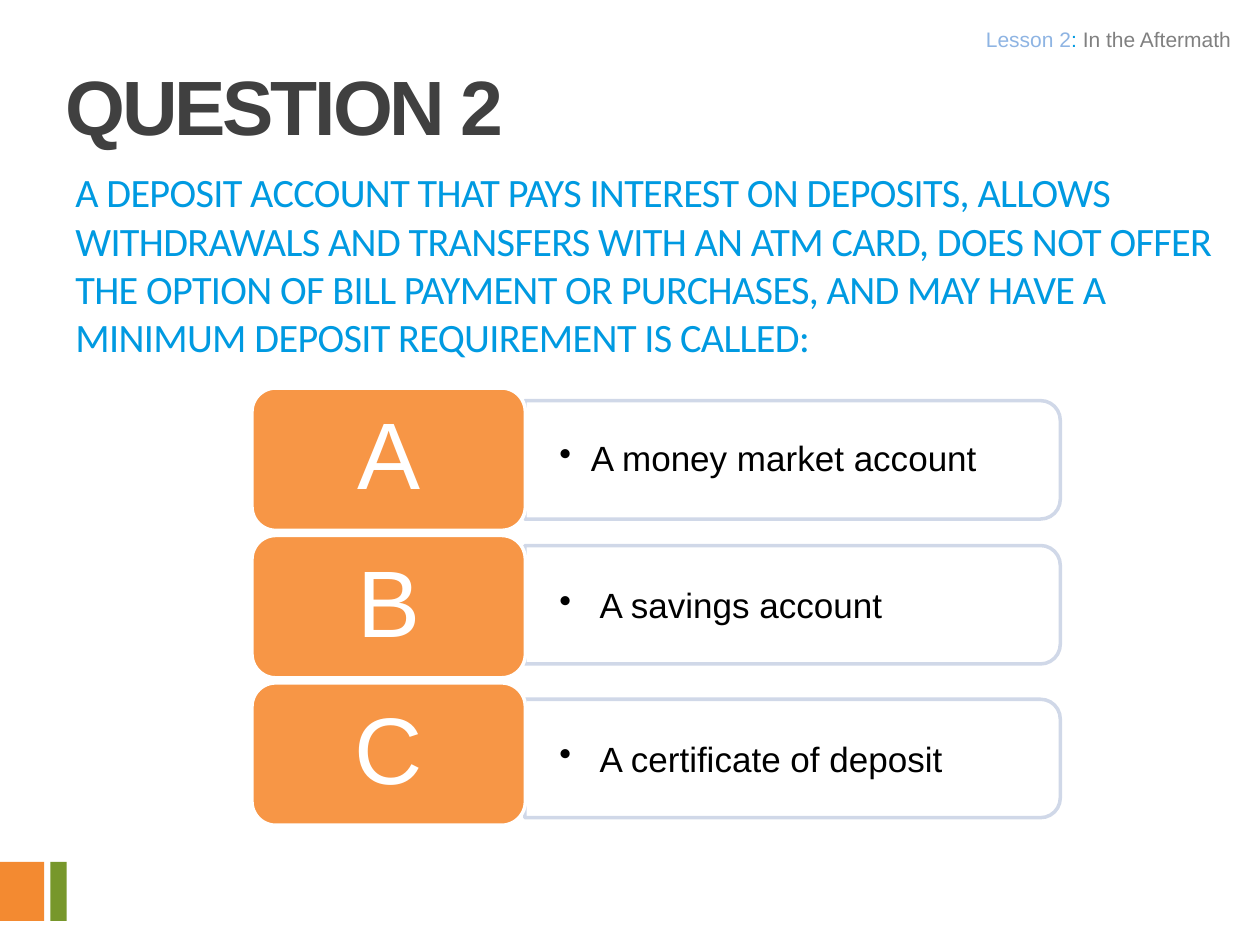
from lxml import etree
from pptx import Presentation, util as u
from pptx.dml.color import RGBColor
from pptx.enum import shapes, text
from pptx.oxml.ns import qn

WIDE, HIGH = 10, 7.5
STEP = 1.17  # distance between answer rows
KIND = shapes.MSO_SHAPE
ROWS = [  # letter, answer, middle of the answer frame, hanging indent
    ("A", "A money market account", 3.65, 0.25),
    ("B", "A savings account", 4.8, 0.32),
    ("C", "A certificate of deposit", 6.02, 0.32),
]
ASK = ("A DEPOSIT ACCOUNT THAT PAYS INTEREST ON DEPOSITS, ALLOWS "
       "WITHDRAWALS AND TRANSFERS WITH AN ATM CARD, DOES NOT OFFER THE "
       "OPTION OF BILL PAYMENT OR PURCHASES, AND MAY HAVE A MINIMUM "
       "DEPOSIT REQUIREMENT IS CALLED:")


def tint(color, code):
    color.rgb = RGBColor.from_string(code)


def block(slide, kind, area, fill, line=None):
    """Draw a filled preset shape, with a 2 pt outline if asked."""
    shape = slide.shapes.add_shape(kind, *map(u.Inches, area))
    shape.shadow.inherit = False
    shape.fill.solid()
    tint(shape.fill.fore_color, fill)
    if line:
        tint(shape.line.color, line)
        shape.line.width = u.Pt(2)
    else:
        shape.line.fill.background()
    return shape


def write(shape, runs, size, face="Arial", inset=(0.1, 0.05),
          align=text.PP_ALIGN.LEFT, anchor=text.MSO_ANCHOR.TOP,
          gap=None, bold=False, track=0, hang=0):
    """Fill a shape with one paragraph of (words, colour) runs."""
    frame = shape.text_frame
    frame.word_wrap = True
    frame.vertical_anchor = anchor
    frame.margin_left = frame.margin_right = u.Inches(inset[0])
    frame.margin_top = frame.margin_bottom = u.Inches(inset[1])
    para = frame.paragraphs[0]
    para.alignment = align
    if gap:
        para.line_spacing = gap
    if hang:
        props = para._p.get_or_add_pPr()
        props.set("marL", str(u.Inches(hang)))
        props.set("indent", str(-u.Inches(hang)))
        etree.SubElement(props, qn("a:buChar")).set("char", "•")
    font = para.font
    font.name, font.size, font.bold = face, u.Pt(size), bold
    for words, code in runs:
        run = para.add_run()
        run.text = words
        tint(run.font.color, code)
        if track:
            run._r.get_or_add_rPr().set("spc", str(round(track * 100)))


def label(slide, area, runs, size, **style):
    box = slide.shapes.add_textbox(*map(u.Inches, area))
    write(box, runs, size, **style)


def answer(slide, row, item):
    """Draw one row: outlined frame, its text, and the letter tile."""
    letter, words, mid, hang = item
    wide, high = 4.25, 0.94
    # The frame is upright, then turned so its round corners face right
    frame = block(slide, KIND.ROUND_2_SAME_RECTANGLE,
                  (6.29 - high / 2, mid - wide / 2, high, wide),
                  "FFFFFF", "D0D8E8")
    frame.rotation = 90
    label(slide, (4.17, mid - 0.42, 4.2, 0.84), [(words, "000000")], 20,
          inset=(0.27, 0.14), anchor=text.MSO_ANCHOR.MIDDLE,
          gap=0.9 if row == 0 else None, hang=hang)
    tile = block(slide, KIND.ROUNDED_RECTANGLE,
                 (2, 3.08 + row * STEP, 2.17, 1.13), "F79646", "FFFFFF")
    write(tile, [(letter, "FFFFFF")], 54, inset=(0.23, 0.11), gap=0.9,
          align=text.PP_ALIGN.CENTER, anchor=text.MSO_ANCHOR.MIDDLE)


def main():
    deck = Presentation()
    deck.slide_width, deck.slide_height = u.Inches(WIDE), u.Inches(HIGH)
    slide = deck.slides.add_slide(deck.slide_layouts[6])

    # Corner marks
    for left, wide, code in [(0, 0.35, "F38A31"), (0.4, 0.13, "77972B")]:
        block(slide, KIND.RECTANGLE, (left, 6.84, wide, 0.47), code)

    # Question
    label(slide, (0.5, 1.25, 9.5, 1.75), [(ASK, "009AE1")], 23,
          face="Calibri", inset=(0.1, 0.08), track=-0.4)

    # Answers
    for row, item in enumerate(ROWS):
        answer(slide, row, item)

    # Lesson name and title
    label(slide, (4, 0.17, 5.85, 0.32),
          [("Lesson 2", "8EB4E3"), (": ", "009AE1"),
           ("In the Aftermath", "808080")], 12,
          inset=(0.08, 0.04), align=text.PP_ALIGN.RIGHT)
    label(slide, (0.42, 0.33, 8.66, 0.83), [("QUESTION 2", "404040")], 44,
          gap=u.Pt(59), bold=True, track=-1.8)

    deck.save("out.pptx")


if __name__ == "__main__":
    main()
